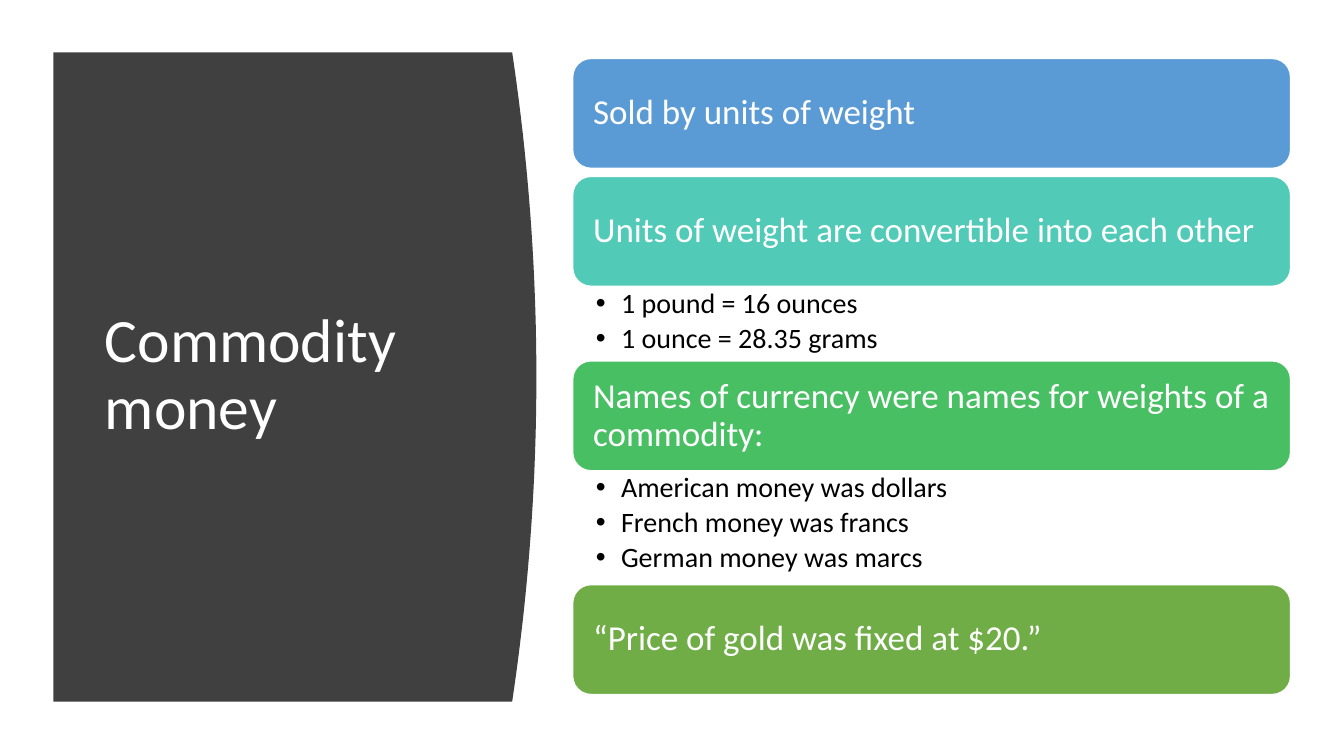
from pptx import Presentation
from pptx.dml.color import RGBColor
from pptx.enum.shapes import MSO_SHAPE
from pptx.enum.text import MSO_ANCHOR, MSO_AUTO_SIZE, PP_ALIGN
from pptx.util import Inches, Pt

ROUND = MSO_SHAPE.ROUNDED_RECTANGLE
MIDDLE, TOP = MSO_ANCHOR.MIDDLE, MSO_ANCHOR.TOP
NO_FIT = MSO_AUTO_SIZE.NONE
LEFT = PP_ALIGN.LEFT

WHITE = RGBColor(0xFF, 0xFF, 0xFF)
BLACK = RGBColor(0x00, 0x00, 0x00)
DARK = RGBColor(0x40, 0x40, 0x40)
BLUE = RGBColor(0x5B, 0x9B, 0xD5)
TEAL = RGBColor(0x52, 0xCA, 0xB8)
GREEN = RGBColor(0x49, 0xBF, 0x64)
OLIVE = RGBColor(0x70, 0xAD, 0x47)

# Column of cards and lists, in inches
COL_X, COL_W = 5.68, 7.12
CARD_H, GAP = 1.09, 0.08
ROWS = [
    (BLUE, "Sold by units of weight", [], GAP),
    (TEAL, "Units of weight are convertible into each other",
     ["1 pound = 16 ounces", "1 ounce = 28.35 grams"], 0.74),
    (GREEN, "Names of currency were names for weights of a commodity:",
     ["American money was dollars", "French money was francs",
      "German money was marcs"], 1.13),
    (OLIVE, "“Price of gold was fixed at $20.”", [], 0),
]


class Deck:
    face = "Calibri"

    def __init__(self):
        self.prs = Presentation()
        self.prs.slide_width = Inches(13.33)
        self.prs.slide_height = Inches(7.5)
        self.slide = self.prs.slides.add_slide(self.prs.slide_layouts[3])
        self.shapes = self.slide.shapes

    def place(self, shape, box):
        for name, val in zip(("left", "top", "width", "height"), box):
            setattr(shape, name, Inches(val))

    def label(self, shape, lines, size, color, pads, anchor=MIDDLE, after=0):
        frame = shape.text_frame
        frame.text = "\n".join(lines)
        look = {"word_wrap": True, "auto_size": NO_FIT,
                "vertical_anchor": anchor}
        sides = ("margin_left", "margin_top", "margin_right", "margin_bottom")
        look.update(zip(sides, map(Inches, pads)))
        for name, val in look.items():
            setattr(frame, name, val)
        style = {"alignment": LEFT, "line_spacing": 0.9,
                 "space_before": Pt(0), "space_after": Pt(after)}
        font = {"name": self.face, "size": Pt(size)}
        for para in frame.paragraphs:
            for name, val in style.items():
                setattr(para, name, val)
            for run in para.runs:
                for name, val in font.items():
                    setattr(run.font, name, val)
                run.font.color.rgb = color

    def title(self, text, box):
        shape = self.shapes.title
        self.place(shape, box)
        self.label(shape, [text], 44, WHITE, (0.1, 0.05, 0.1, 0.05))

    def panel(self, x, y, edge, height, bulge, color, steps=40):
        # The right side is a parabola, widest at mid height
        pts = [(x, y)]
        for i in range(steps + 1):
            t = i / steps
            bow = bulge * (1 - (2 * t - 1) ** 2)
            pts.append((edge + bow, y + height * t))
        pts.append((x, y + height))
        pts = [(Inches(a), Inches(b)) for a, b in pts]
        form = self.shapes.build_freeform(*pts[0], scale=1.0)
        form.add_line_segments(pts[1:], close=True)
        shape = form.convert_to_shape()
        shape.shadow.inherit = False
        shape.fill.solid()
        shape.fill.fore_color.rgb = color
        shape.line.fill.background()
        # Send behind the title
        self.shapes.title.element.addprevious(shape.element)

    def card(self, text, box, color):
        shape = self.shapes.add_shape(ROUND, *map(Inches, box))
        shape.shadow.inherit = False
        shape.fill.solid()
        shape.fill.fore_color.rgb = color
        shape.line.color.rgb = WHITE
        shape.line.width = Pt(1)
        self.label(shape, [text], 25, WHITE, (0.15,) * 4)

    def list(self, slot, items, box):
        shape = self.slide.placeholders[slot]
        self.place(shape, box)
        self.label(shape, items, 20, BLACK, (0.23, 0.03, 0.19, 0.03), TOP, 3.2)
        indent = Inches(0.25)
        for para in shape.text_frame.paragraphs:
            props = para._p.get_or_add_pPr()
            props.set("marL", str(indent))
            props.set("indent", str(-indent))


def main():
    deck = Deck()

    # Dark panel with the title
    deck.panel(0.53, 0.52, 5.08, 6.44, 0.24, DARK)
    deck.title("Commodity money", (0.94, 1.11, 3.74, 5.24))

    # Cards, each followed by its list or a gap
    y, slot = 0.58, 1
    for color, text, items, below in ROWS:
        deck.card(text, (COL_X, y, COL_W, CARD_H), color)
        y += CARD_H
        if items:
            deck.list(slot, items, (COL_X, y, COL_W, below))
            slot += 1
        y += below

    deck.prs.save("out.pptx")


if __name__ == "__main__":
    main()
